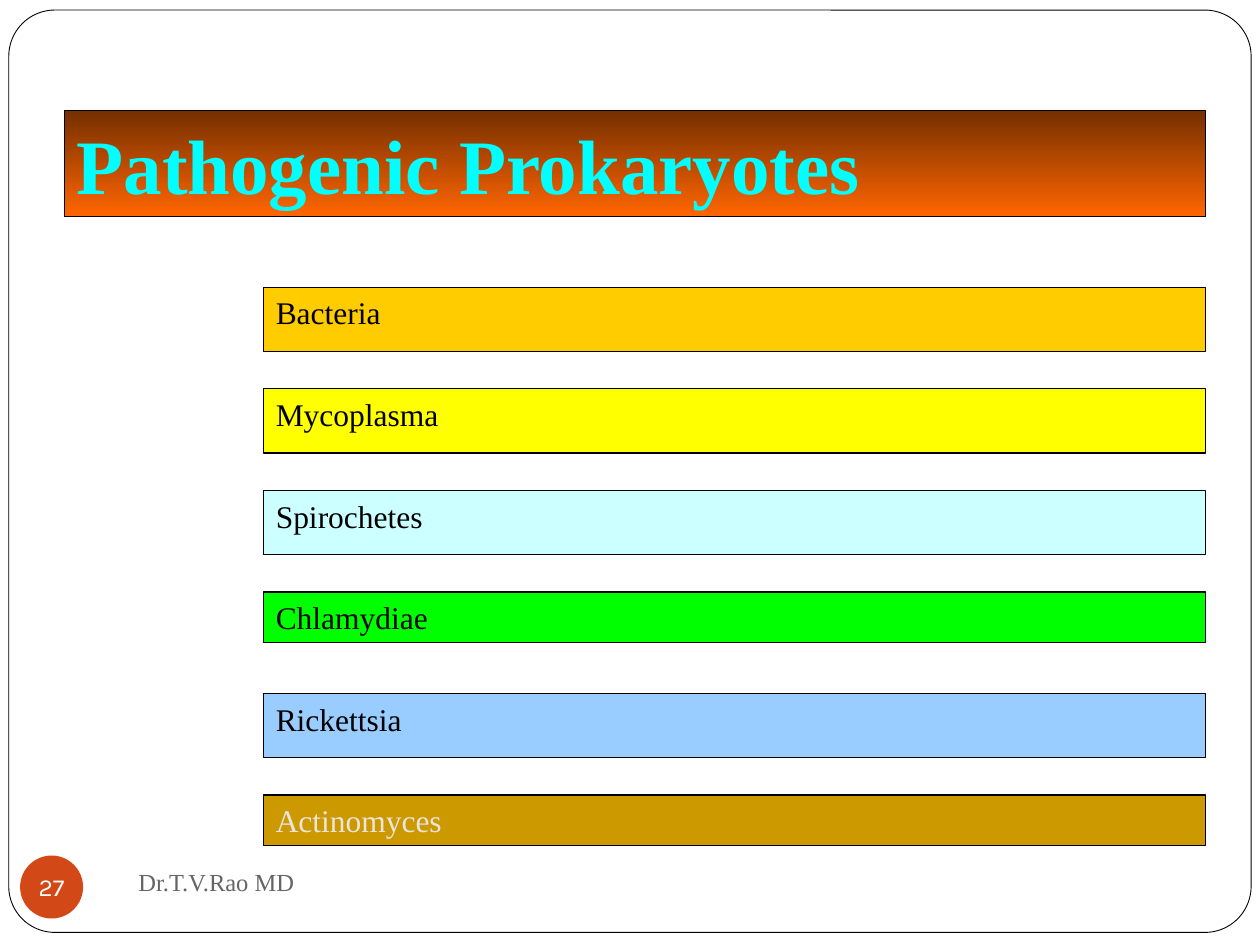
from dataclasses import dataclass

from pptx import Presentation
from pptx.dml.color import RGBColor
from pptx.enum.shapes import MSO_SHAPE
from pptx.enum.text import MSO_ANCHOR, MSO_AUTO_SIZE, PP_ALIGN
from pptx.util import Inches, Pt

RECT, ROUND_RECT, OVAL = MSO_SHAPE.RECTANGLE, MSO_SHAPE.ROUNDED_RECTANGLE, MSO_SHAPE.OVAL
TOP, MIDDLE = MSO_ANCHOR.TOP, MSO_ANCHOR.MIDDLE
LEFT, CENTER = PP_ALIGN.LEFT, PP_ALIGN.CENTER
GROW = MSO_AUTO_SIZE.SHAPE_TO_FIT_TEXT


@dataclass(frozen=True)
class Theme:
    serif: str = "Times New Roman"
    sans: str = "Karla"
    title_size: int = 44
    body_size: int = 18
    small_size: int = 14
    ink: str = "000000"
    paper: str = "FFFFFF"
    pale: str = "E9E5DC"
    grey: str = "696464"
    accent: str = "D34817"
    title_text: str = "00FFFF"
    title_top: str = "762F00"
    title_bottom: str = "FF6600"


@dataclass(frozen=True)
class Bar:
    label: str
    fill: str
    height: float = 0.51
    color: str = Theme.ink


THEME = Theme()
BARS = [
    Bar("Bacteria", "FFCC00"),
    Bar("Mycoplasma", "FFFF00"),
    Bar("Spirochetes", "CCFFFF"),
    Bar("Chlamydiae", "00FF00", height=0.4),
    Bar("Rickettsia", "99CCFF"),
    Bar("Actinomyces", "CC9900", height=0.4, color=THEME.pale),
]
BAR_LEFT, BAR_TOP, BAR_WIDTH, BAR_PITCH = 2.09, 2.28, 7.48, 0.806


def rgb(value: str) -> RGBColor:
    return RGBColor.from_string(value)


def add_shape(slide, kind, x: float, y: float, w: float, h: float, fill: str, line: float = 0):
    """Draw a flat preset shape; a line width of 0 means no outline."""
    sp = slide.shapes.add_shape(kind, Inches(x), Inches(y), Inches(w), Inches(h))
    sp.shadow.inherit = False
    sp.fill.solid()
    sp.fill.fore_color.rgb = rgb(fill)
    if line:
        sp.line.color.rgb = rgb(THEME.ink)
        sp.line.width = Pt(line)
    else:
        sp.line.fill.background()
    return sp


def set_text(sp, text: str, *, size: int, color: str, font: str = THEME.serif, bold: bool = False,
             align=LEFT, anchor=TOP, wrap: bool = True, grow: bool = False) -> None:
    tf = sp.text_frame
    tf.word_wrap = wrap
    tf.vertical_anchor = anchor
    if grow:
        tf.auto_size = GROW
    p = tf.paragraphs[0]
    p.alignment = align
    r = p.add_run()
    r.text = text
    r.font.name, r.font.size, r.font.bold = font, Pt(size), bold
    r.font.color.rgb = rgb(color)


def add_title(slide) -> None:
    sp = add_shape(slide, RECT, 0.51, 0.88, 9.06, 0.84, THEME.title_bottom, line=0.75)
    sp.fill.gradient()
    sp.fill.gradient_angle = 270
    for stop, color in zip(sp.fill.gradient_stops, (THEME.title_top, THEME.title_bottom)):
        stop.color.rgb = rgb(color)
    set_text(sp, "Pathogenic Prokaryotes", size=THEME.title_size, color=THEME.title_text,
             bold=True, grow=True)


def add_bar(slide, row: int, bar: Bar) -> None:
    sp = add_shape(slide, RECT, BAR_LEFT, BAR_TOP + row * BAR_PITCH, BAR_WIDTH, bar.height,
                   bar.fill, line=0.75)
    set_text(sp, bar.label, size=THEME.body_size, color=bar.color, grow=True)


def add_footer(slide) -> None:
    s = slide.shapes.add_textbox(Inches(1), Inches(6.75), Inches(4.33), Inches(0.5))
    set_text(s, "Dr.T.V.Rao MD", size=THEME.small_size, color=THEME.grey, anchor=MIDDLE)

    badge = add_shape(slide, OVAL, 0.16, 6.79, 0.5, 0.5, THEME.accent)
    tf = badge.text_frame
    tf.margin_left = tf.margin_right = tf.margin_top = tf.margin_bottom = 0
    set_text(badge, "27", size=THEME.small_size, color=THEME.paper, font=THEME.sans,
             align=CENTER, anchor=MIDDLE, wrap=False)


def main() -> None:
    prs = Presentation()
    prs.slide_width, prs.slide_height = Inches(10), Inches(7.5)
    slide = prs.slides.add_slide(prs.slide_layouts[6])

    # Page frame
    frame = add_shape(slide, ROUND_RECT, 0.07, 0.08, 9.86, 7.32, THEME.paper, line=0.5)
    frame.adjustments[0] = 0.05

    # Title and list of groups
    add_title(slide)
    for row, bar in enumerate(BARS):
        add_bar(slide, row, bar)

    # Author and slide number
    add_footer(slide)
    prs.save("out.pptx")


if __name__ == "__main__":
    main()
